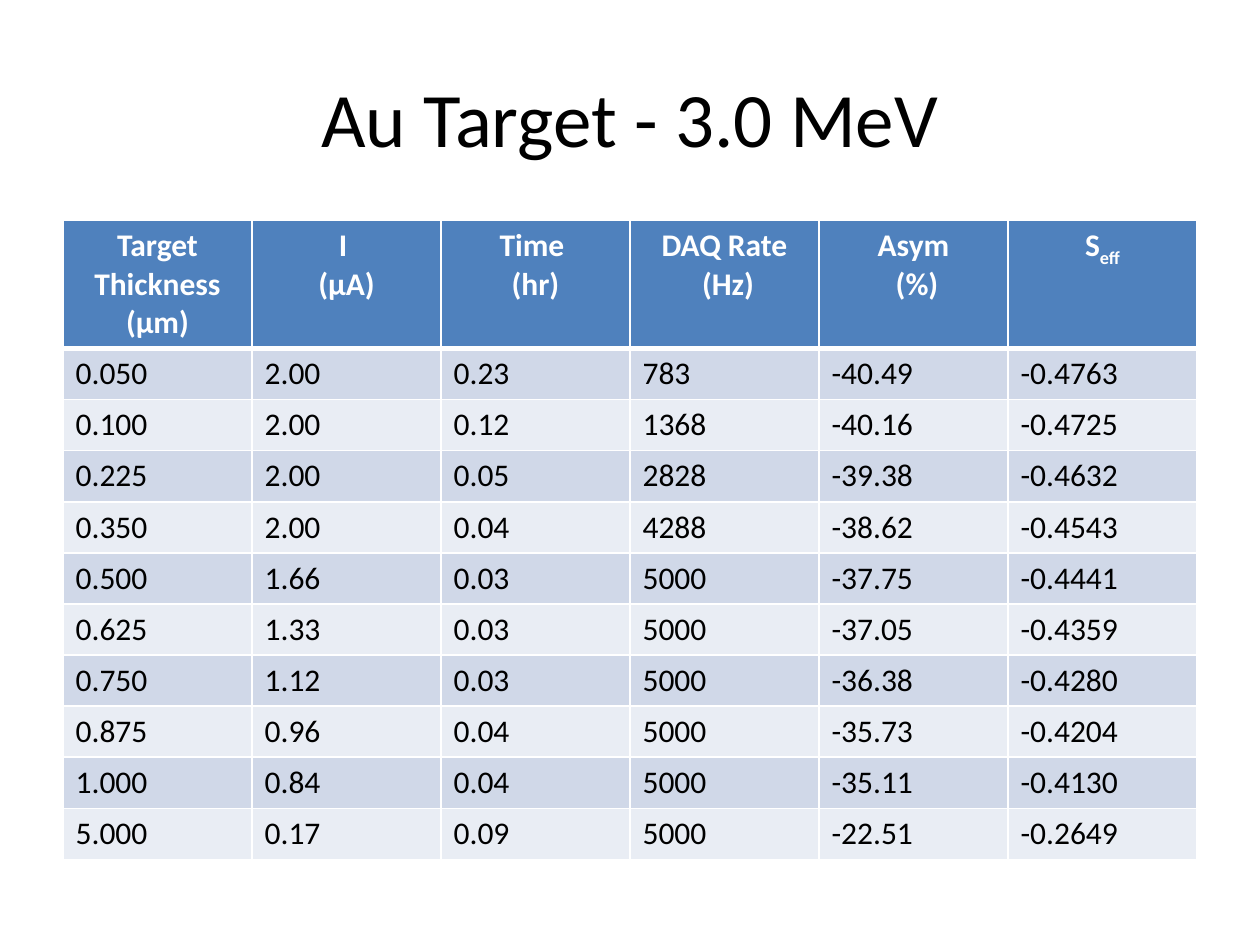
from lxml import etree
from pptx import Presentation
from pptx import util as u
from pptx.dml import color
from pptx.enum import text
from pptx.oxml import ns

HEADERS = [
    [["Target Thickness (µm)"]],
    [["I "], ["(µA)"]],
    [["Time "], ["(hr)"]],
    [["DAQ Rate"], [" (Hz)"]],
    [["Asym"], [" (%)"]],
    [["S", "eff"]],
]
MEASUREMENTS = [
    "0.050 2.00 0.23 783 -40.49 -0.4763",
    "0.100 2.00 0.12 1368 -40.16 -0.4725",
    "0.225 2.00 0.05 2828 -39.38 -0.4632",
    "0.350 2.00 0.04 4288 -38.62 -0.4543",
    "0.500 1.66 0.03 5000 -37.75 -0.4441",
    "0.625 1.33 0.03 5000 -37.05 -0.4359",
    "0.750 1.12 0.03 5000 -36.38 -0.4280",
    "0.875 0.96 0.04 5000 -35.73 -0.4204",
    "1.000 0.84 0.04 5000 -35.11 -0.4130",
    "5.000 0.17 0.09 5000 -22.51 -0.2649",
]


def rgb(value):
    return color.RGBColor.from_string(value)


class SlideBuilder:
    font_name = "Calibri"
    header_fill = "4F81BD"
    band_fills = ("D0D8E8", "E9EDF4")
    border_color = "FFFFFF"
    title_format = {"size": u.Pt(44), "bold": False}
    header_format = {"size": u.Pt(18), "bold": True}
    body_format = {"size": u.Pt(18), "bold": False}

    def __init__(self, page):
        self.page = page

    def paragraphs(self, frame, lines, formats, ink, align):
        for index, pieces in enumerate(lines):
            para = frame.add_paragraph() if index else frame.paragraphs[0]
            para.alignment = align
            for position, piece in enumerate(pieces):
                span = para.add_run()
                span.text = piece
                for name, value in {"name": self.font_name, **formats}.items():
                    setattr(span.font, name, value)
                span.font.color.rgb = rgb(ink)
                if position:
                    span.font._element.set("baseline", "-25000")

    def title(self, words, left, top, width, height):
        box = self.page.shapes.title
        bounds = {"left": left, "top": top, "width": width, "height": height}
        for name, value in bounds.items():
            setattr(box, name, u.Pt(value))
        box.text_frame.vertical_anchor = text.MSO_ANCHOR.MIDDLE
        self.paragraphs(box.text_frame, [[words]], self.title_format, "000000", text.PP_ALIGN.CENTER)

    def borders(self, cell, top, bottom):
        properties = cell._tc.get_or_add_tcPr()
        for side, width in {"lnL": 1, "lnR": 1, "lnT": top, "lnB": bottom}.items():
            line = etree.SubElement(properties, ns.qn(f"a:{side}"), w=str(u.Pt(width)))
            fill = etree.SubElement(line, ns.qn("a:solidFill"))
            etree.SubElement(fill, ns.qn("a:srgbClr"), val=self.border_color)

    def cell(self, cell, lines, row):
        self.borders(cell, 3 if row == 1 else 1, 1 if row else 3)
        cell.fill.solid()
        if row:
            fill, formats, ink = self.band_fills[(row - 1) % 2], self.body_format, "000000"
            align = text.PP_ALIGN.LEFT
        else:
            fill, formats, ink = self.header_fill, self.header_format, "FFFFFF"
            align = text.PP_ALIGN.CENTER
        cell.fill.fore_color.rgb = rgb(fill)
        self.paragraphs(cell.text_frame, lines, formats, ink, align)

    def table(self, rows, left, top, column_width, header_height, row_height):
        columns = len(rows[0])
        height = header_height + row_height * (len(rows) - 1)
        frame = self.page.shapes.add_table(
            len(rows), columns, u.Pt(left), u.Pt(top), u.Pt(column_width * columns), u.Pt(height)
        )
        grid = frame.table
        for row, values in enumerate(rows):
            grid.rows[row].height = u.Pt(row_height if row else header_height)
            for column, lines in enumerate(values):
                self.cell(grid.cell(row, column), lines, row)


def main():
    deck = Presentation()
    deck.slide_width, deck.slide_height = u.Pt(720), u.Pt(540)
    builder = SlideBuilder(deck.slides.add_slide(deck.slide_layouts[5]))
    builder.title("Au Target - 3.0 MeV", 36, 21.6, 648, 90)
    rows = [HEADERS] + [[[[value]] for value in line.split()] for line in MEASUREMENTS]
    builder.table(rows, 36, 126, 108, 72.6, 29.2)
    deck.save("out.pptx")


if __name__ == "__main__":
    main()
